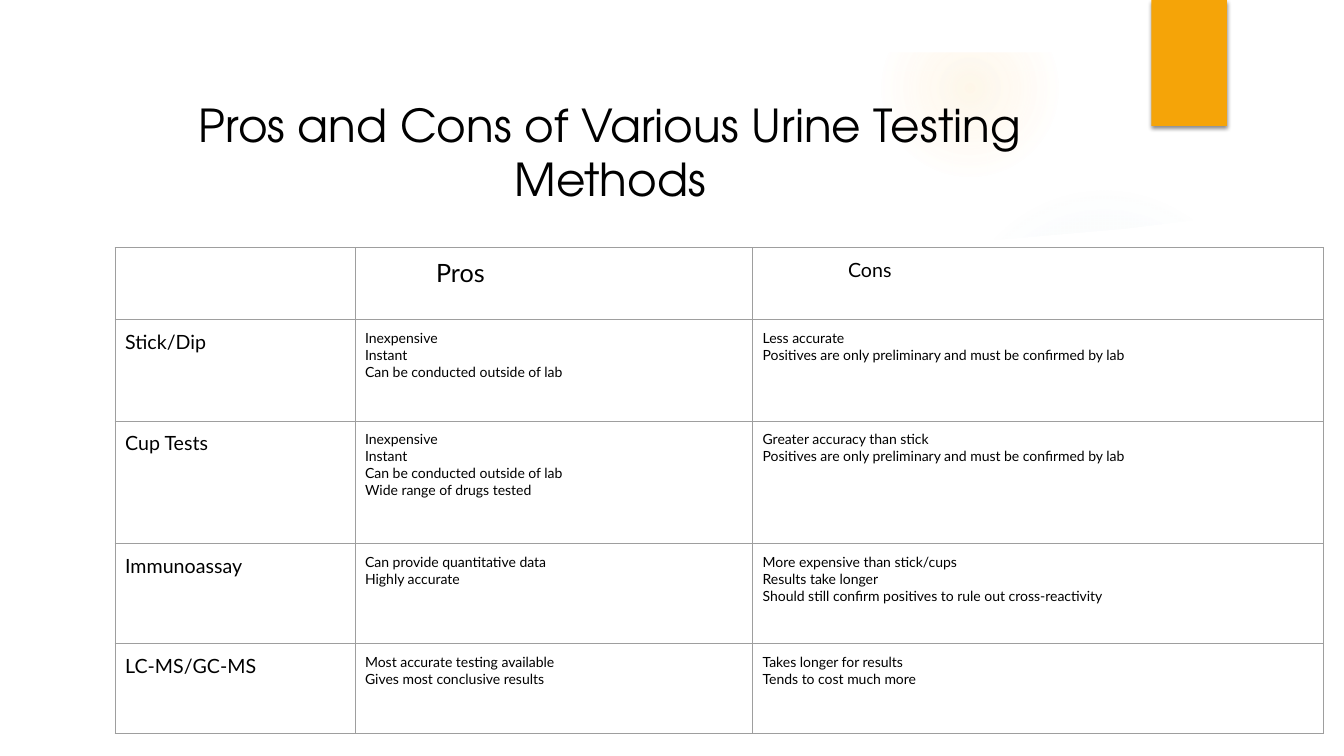
from lxml.etree import SubElement
from pptx import Presentation
from pptx.dml.color import RGBColor
from pptx.enum.shapes import MSO_SHAPE as Preset
from pptx.enum.text import MSO_ANCHOR as Anchor, MSO_AUTO_SIZE as AutoSize, PP_ALIGN as Align
from pptx.oxml import parse_xml
from pptx.oxml.ns import nsdecls, qn
from pptx.util import Pt

WHITE, BLACK, AMBER, GRID = "FFFFFF", "000000", "F5A408", "9E9E9E"
CELL_MARGIN = 7.2
COLUMN_WIDTHS = [171.4, 284, 407.6]
ROW_HEIGHTS = [51.4, 72.2, 87.8, 71.4, 63.8]
HEADINGS = [("Pros", 1, 18, 50.7), ("Cons", 2, 14, 61)]
PRELIMINARY = "Positives are only preliminary and must be confirmed by lab"
QUICK_TEST_PROS = ["Inexpensive", "Instant", "Can be conducted outside of lab"]
METHODS = [
    ("Stick/Dip", QUICK_TEST_PROS, ["Less accurate", PRELIMINARY]),
    ("Cup Tests", QUICK_TEST_PROS + ["Wide range of drugs tested"],
     ["Greater accuracy than stick", PRELIMINARY]),
    ("Immunoassay", ["Can provide quantitative data", "Highly accurate"],
     ["More expensive than stick/cups", "Results take longer",
      "Should still confirm positives to rule out cross-reactivity"]),
    ("LC-MS/GC-MS", ["Most accurate testing available", "Gives most conclusive results"],
     ["Takes longer for results", "Tends to cost much more"]),
]
SHEET_OUTLINE = [
    (36, 147), (36, 504), (924.5, 504), (924.5, 147), (884, 153), (844, 158.5),
    (803.5, 163.5), (763, 167), (723, 170.5), (683, 173.5), (643.5, 175.5),
    (585, 177.5), (510, 178.5), (437, 178), (368, 176.5), (289, 171.5),
    (204, 165.5), (115, 156.5), (68, 151),
]


def colour(hex_code):
    return RGBColor.from_string(hex_code)


def paint(shape, hex_code):
    shape.shadow.inherit = False
    shape.line.fill.background()
    shape.fill.solid()
    shape.fill.fore_color.rgb = colour(hex_code)


def add_block(slide, hex_code, left, top, width, height, preset=Preset.RECTANGLE):
    block = slide.shapes.add_shape(preset, Pt(left), Pt(top), Pt(width), Pt(height))
    paint(block, hex_code)
    return block


def add_glow(slide, hex_code, left, top, diameter, stops):
    glow = add_block(slide, hex_code, left, top, diameter, diameter, Preset.OVAL)
    gradient_stops = "".join(
        f'<a:gs pos="{position * 1000}"><a:srgbClr val="{hex_code}">'
        f'<a:alpha val="{opacity * 1000}"/></a:srgbClr></a:gs>'
        for position, opacity in stops)
    gradient = parse_xml(
        f'<a:gradFill {nsdecls("a")} rotWithShape="1"><a:gsLst>{gradient_stops}</a:gsLst>'
        '<a:path path="circle"><a:fillToRect l="50000" t="50000" r="50000" b="50000"/>'
        '</a:path></a:gradFill>')
    solid = glow.element.spPr.find(qn("a:solidFill"))
    solid.getparent().replace(solid, gradient)


def add_sheet(slide):
    points = [(Pt(x), Pt(y)) for x, y in SHEET_OUTLINE]
    builder = slide.shapes.build_freeform(*points[0], scale=1.0)
    builder.add_line_segments(points[1:], close=True)
    paint(builder.convert_to_shape(), WHITE)


def add_border(slide):
    border = add_block(slide, WHITE, 0, 0, 960, 540, Preset.FRAME)
    border.adjustments[0] = 37.4 / 540


def add_tab(slide):
    tab = add_block(slide, AMBER, 822.4, 0, 54, 90)
    effects = tab.element.spPr.find(qn("a:effectLst"))
    effects.append(parse_xml(
        f'<a:outerShdw {nsdecls("a")} blurRad="{Pt(3)}" dist="{Pt(2)}" dir="5400000" '
        f'rotWithShape="0"><a:srgbClr val="{BLACK}"><a:alpha val="45000"/></a:srgbClr>'
        '</a:outerShdw>'))


def set_title(slide, text):
    title = slide.shapes.title
    title.left, title.top, title.width, title.height = Pt(91), Pt(74.6), Pt(689.8), Pt(67)
    frame = title.text_frame
    frame.text = text
    frame.word_wrap = True
    frame.auto_size = AutoSize.NONE
    frame.vertical_anchor = Anchor.MIDDLE
    paragraph = frame.paragraphs[0]
    paragraph.alignment = Align.CENTER
    style(paragraph, "TeX Gyre Adventor", 32.4)
    title.element.getparent().append(title.element)


def style(paragraph, typeface, size):
    font = paragraph.font
    font.name, font.size, font.color.rgb = typeface, Pt(size), colour(BLACK)


def write_cell(cell, lines, size, indent=0):
    cell.text = "\n".join(lines)
    cell.margin_left = Pt(CELL_MARGIN + indent)
    for paragraph in cell.text_frame.paragraphs:
        style(paragraph, "Lato", size)


def format_cell(cell):
    cell.margin_left = cell.margin_right = Pt(CELL_MARGIN)
    cell.margin_top = cell.margin_bottom = Pt(CELL_MARGIN)
    properties = cell._tc.get_or_add_tcPr()
    for side in ("lnL", "lnR", "lnT", "lnB"):
        border = SubElement(properties, qn(f"a:{side}"), w=str(Pt(0.75)))
        SubElement(SubElement(border, qn("a:solidFill")), qn("a:srgbClr"), val=GRID)
    cell.fill.background()


def add_comparison(slide):
    table = slide.shapes.add_table(
        len(ROW_HEIGHTS), len(COLUMN_WIDTHS), Pt(82.2), Pt(177.1),
        Pt(sum(COLUMN_WIDTHS)), Pt(sum(ROW_HEIGHTS))).table
    table.first_row = table.horz_banding = False
    for column, width in zip(table.columns, COLUMN_WIDTHS):
        column.width = Pt(width)
    for row, height in zip(table.rows, ROW_HEIGHTS):
        row.height = Pt(height)
    for cell in table.iter_cells():
        format_cell(cell)
    for heading, column, size, indent in HEADINGS:
        write_cell(table.cell(0, column), [heading], size, indent)
    for row, (method, pros, cons) in enumerate(METHODS, start=1):
        write_cell(table.cell(row, 0), [method], 14)
        write_cell(table.cell(row, 1), pros, 10)
        write_cell(table.cell(row, 2), cons, 10)


def main():
    deck = Presentation()
    deck.slide_width, deck.slide_height = Pt(960), Pt(540)
    slide = deck.slides.add_slide(deck.slide_layouts[5])
    add_glow(slide, "8EBBD2", 677.5, 131.8, 221.8, [(0, 7), (36, 6), (69, 0)])
    add_glow(slide, "FAC96A", 630, 0, 126, [(0, 14), (36, 7), (73, 0)])
    add_sheet(slide)
    add_border(slide)
    add_tab(slide)
    set_title(slide, "Pros and Cons of Various Urine Testing Methods")
    add_comparison(slide)
    deck.save("out.pptx")


if __name__ == "__main__":
    main()
